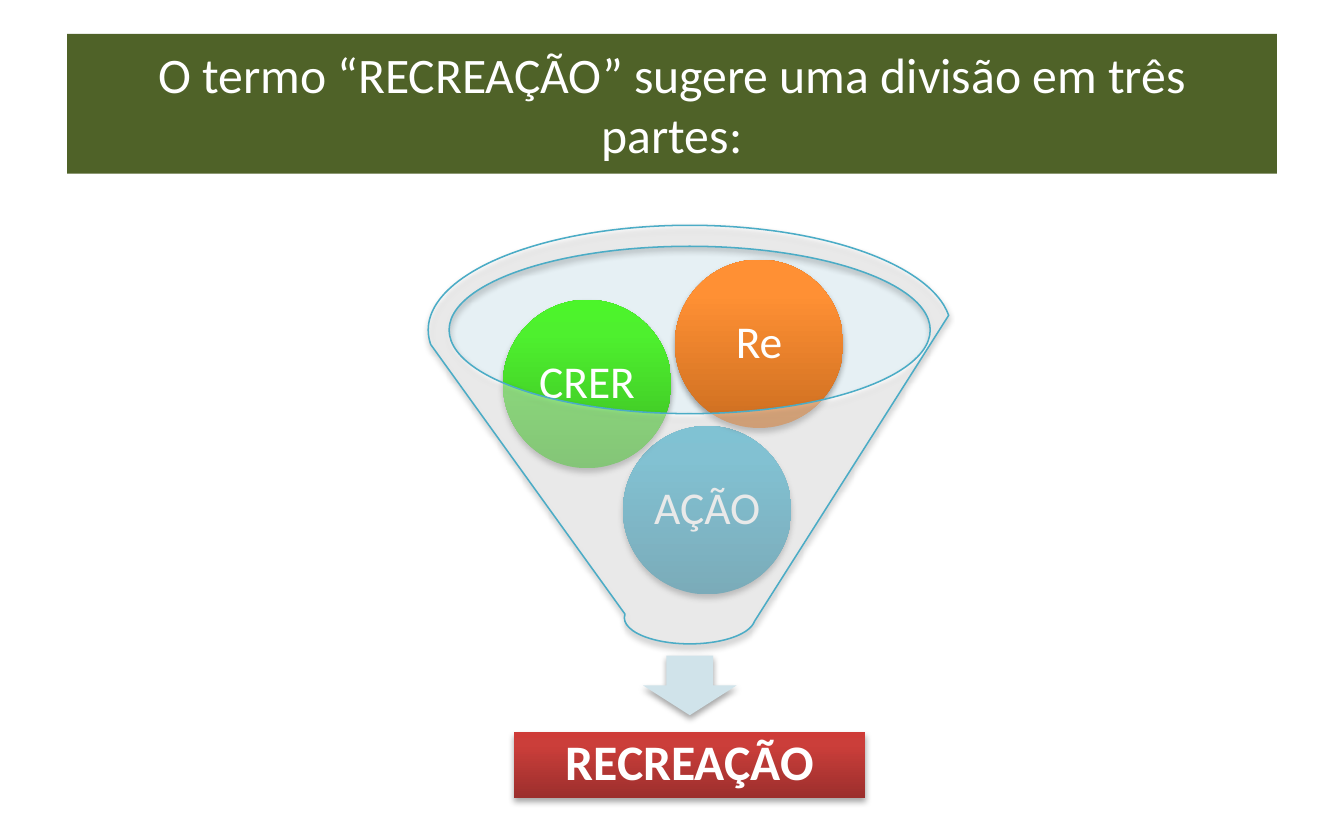
from lxml import etree
from pptx import Presentation
from pptx.dml.color import RGBColor
from pptx.enum.shapes import MSO_SHAPE
from pptx.enum.text import MSO_ANCHOR, MSO_AUTO_SIZE, PP_ALIGN
from pptx.oxml.ns import qn
from pptx.util import Pt

ELLIPSE, RECT = MSO_SHAPE.OVAL, MSO_SHAPE.RECTANGLE
ARROW, FUNNEL = MSO_SHAPE.DOWN_ARROW, MSO_SHAPE.FUNNEL
MIDDLE, CENTER, NO_FIT = MSO_ANCHOR.MIDDLE, PP_ALIGN.CENTER, MSO_AUTO_SIZE.NONE
BALL = 81.4


def add_part(kind, box, colors, alpha=100, shadow=True):
    """Add an unlined shape; three colours make a vertical gradient, from the bottom up."""
    s = slide.shapes.add_shape(kind, *[Pt(v) for v in box])
    if len(colors) == 1:
        s.fill.solid()
        s.fill.fore_color.rgb = RGBColor.from_string(colors[0])
        color = s._element.spPr.find(".//" + qn("a:srgbClr"))
        if alpha < 100:
            etree.SubElement(color, qn("a:alpha"), val=str(alpha * 1000))
    else:
        s.fill.gradient()
        s.fill.gradient_angle = 90
        stops = s._element.spPr.find(".//" + qn("a:gsLst"))
        stops.clear()
        for pos, value in zip((0, 80, 100), colors):
            stop = etree.SubElement(stops, qn("a:gs"), pos=str(pos * 1000))
            etree.SubElement(stop, qn("a:srgbClr"), val=value)
    s.line.fill.background()
    s.shadow.inherit = False
    if shadow:
        effects = s._element.spPr.find(qn("a:effectLst"))
        outer = etree.SubElement(effects, qn("a:outerShdw"), blurRad=str(Pt(3.1)),
                                 dist=str(Pt(1.8)), dir="5400000", rotWithShape="0")
        color = etree.SubElement(outer, qn("a:srgbClr"), val="000000")
        etree.SubElement(color, qn("a:alpha"), val="35000")
    return s


def write(s, text, size, margin, bold=False):
    tf = s.text_frame
    tf.margin_left = tf.margin_right = Pt(margin)
    tf.margin_top = tf.margin_bottom = Pt(2)
    tf.word_wrap = True
    tf.auto_size = NO_FIT
    tf.vertical_anchor = MIDDLE
    tf.text = text
    p = tf.paragraphs[0]
    p.alignment = CENTER
    p.font.name = "Calibri"
    p.font.size = Pt(size)
    p.font.bold = bold
    p.font.color.rgb = RGBColor.from_string("FFFFFF")


prs = Presentation()
prs.slide_width, prs.slide_height = Pt(649.4), Pt(406)
slide = prs.slides.add_slide(prs.slide_layouts[5])

title = slide.shapes.title
title.left, title.top, title.width, title.height = Pt(32.4), Pt(16.4), Pt(584.6), Pt(67.5)
title.fill.solid()
title.fill.fore_color.rgb = RGBColor.from_string("4F6228")
write(title, "O termo “RECREAÇÃO” sugere uma divisão em três partes:", 24, margin=12)

add_part(ELLIPSE, (216.9, 118.9, 232.6, 80.6), ["C1DBE5"], alpha=40, shadow=False)
add_part(ARROW, (310.7, 316.9, 45.2, 28.8), ["D0E3EA"])

labelled = [
    (RECT, (248.4, 353.8, 169.7, 31.8), "RECREAÇÃO", 24, ["9C2F2D", "CB3E3A", "CE3B37"]),
    (ELLIPSE, (301, 205.9, BALL, BALL), "AÇÃO", 22, ["2A88A2", "37B1D2", "34B4D6"]),
    (ELLIPSE, (243, 144.9, BALL, BALL), "CRER", 22, ["3CB923", "4EF02E", "4CF52A"]),
    (ELLIPSE, (326.1, 125.5, BALL, BALL), "Re", 22, ["CC6E20", "FF9034", "FF9136"]),
]
for kind, box, text, size, colors in labelled:
    s = add_part(kind, box, colors)
    write(s, text, size, margin=2, bold=kind == RECT)
    s.text_frame.paragraphs[0].line_spacing = 0.9

funnel = add_part(FUNNEL, (206.9, 108.9, 252.7, 202.3), ["FFFFFF"], alpha=40)
funnel.line.color.rgb = RGBColor.from_string("4BACC6")
funnel.line.width = Pt(0.75)

prs.save("out.pptx")
